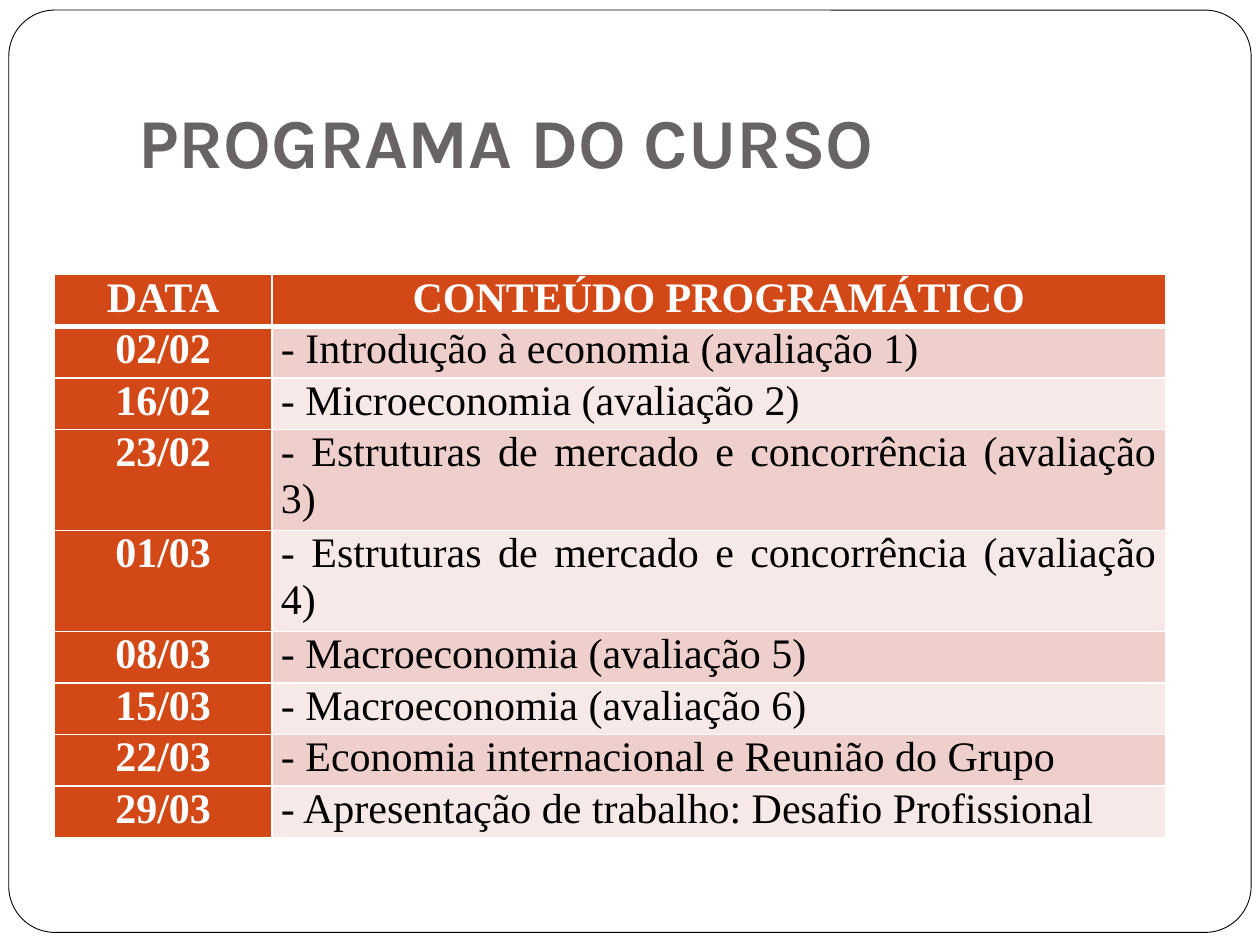
import pptx
import pptx.dml.color
import pptx.enum.shapes
import pptx.enum.text
import pptx.oxml.ns
import pptx.util
from lxml import etree

Inches = pptx.util.Inches
Pt = pptx.util.Pt
ALIGN = pptx.enum.text.PP_ALIGN

COLORS = {
    "white": "FFFFFF",
    "black": "000000",
    "title": "696464",
    "accent": "D34817",
    "band_dark": "EFCFCC",
    "band_light": "F7E9E8",
}

HEADINGS = ("DATA", "CONTEÚDO PROGRAMÁTICO")
CLASSES = [
    ("02/02", "- Introdução à economia (avaliação 1)"),
    ("16/02", "- Microeconomia (avaliação 2)"),
    ("23/02", "- Estruturas de mercado e concorrência (avaliação 3)"),
    ("01/03", "- Estruturas de mercado e concorrência (avaliação 4)"),
    ("08/03", "- Macroeconomia (avaliação 5)"),
    ("15/03", "- Macroeconomia (avaliação 6)"),
    ("22/03", "- Economia internacional e Reunião do Grupo"),
    ("29/03", "- Apresentação de trabalho: Desafio Profissional"),
]


def rgb(name):
    return pptx.dml.color.RGBColor.from_string(COLORS[name])


class SlideBuilder:
    title_font = "Karla"
    table_font = "Times New Roman"

    def __init__(self, slide):
        self.slide = slide

    def add_run(self, paragraph, text, font, size, color, bold):
        run = paragraph.add_run()
        run.text = text
        run.font.name = font
        run.font.size = Pt(size)
        run.font.bold = bold
        run.font.color.rgb = rgb(color)

    def add_frame(self, left, top, width, height):
        shape = self.slide.shapes.add_shape(
            pptx.enum.shapes.MSO_SHAPE.ROUNDED_RECTANGLE,
            Inches(left), Inches(top), Inches(width), Inches(height))
        shape.adjustments[0] = 0.05
        shape.shadow.inherit = False
        shape.fill.solid()
        shape.fill.fore_color.rgb = rgb("white")
        shape.line.color.rgb = rgb("black")
        shape.line.width = Pt(0.5)

    def add_title(self, text, left, top, width, height):
        shape = self.slide.shapes.add_textbox(
            Inches(left), Inches(top), Inches(width), Inches(height))
        frame = shape.text_frame
        frame.word_wrap = True
        frame.vertical_anchor = pptx.enum.text.MSO_ANCHOR.BOTTOM
        frame.margin_bottom = Inches(0.1)
        self.add_run(frame.paragraphs[0], text, self.title_font, 40, "title", True)

    def set_borders(self, cell, top=1, bottom=1):
        properties = cell._tc.get_or_add_tcPr()
        for side, width in (("L", 1), ("R", 1), ("T", top), ("B", bottom)):
            line = etree.SubElement(
                properties, pptx.oxml.ns.qn("a:ln" + side), w=str(Pt(width)))
            fill = etree.SubElement(line, pptx.oxml.ns.qn("a:solidFill"))
            etree.SubElement(
                fill, pptx.oxml.ns.qn("a:srgbClr"), val=COLORS["white"])

    def fill_cell(self, cell, text, fill, color, bold, align):
        cell.margin_left = cell.margin_right = Inches(0.07)
        cell.margin_top = cell.margin_bottom = 0
        cell.fill.solid()
        cell.fill.fore_color.rgb = rgb(fill)
        paragraph = cell.text_frame.paragraphs[0]
        paragraph.alignment = align
        self.add_run(paragraph, text, self.table_font, 24, color, bold)

    def add_schedule(self, rows, left, top, column_widths, row_height):
        table = self.slide.shapes.add_table(
            len(rows), len(column_widths), Inches(left), Inches(top),
            Inches(sum(column_widths)), Inches(row_height * len(rows))).table
        for column, width in zip(table.columns, column_widths):
            column.width = Inches(width)
        for row_index, texts in enumerate(rows):
            table.rows[row_index].height = Inches(row_height)
            band = "band_dark" if row_index % 2 else "band_light"
            for column_index, text in enumerate(texts):
                cell = table.cell(row_index, column_index)
                # A thick rule separates the header from the classes
                self.set_borders(cell, top=3 if row_index == 1 else 1,
                                 bottom=3 if row_index == 0 else 1)
                if row_index == 0 or column_index == 0:
                    self.fill_cell(cell, text, "accent", "white", True, ALIGN.CENTER)
                else:
                    self.fill_cell(cell, text, band, "black", False, ALIGN.JUSTIFY)


def main():
    presentation = pptx.Presentation()
    presentation.slide_width = Inches(10)
    presentation.slide_height = Inches(7.5)
    builder = SlideBuilder(
        presentation.slides.add_slide(presentation.slide_layouts[6]))

    # Frame and title
    builder.add_frame(0.07, 0.08, 9.86, 7.32)
    builder.add_title("PROGRAMA DO CURSO", 1, 0.3, 8.5, 1.25)

    # Course schedule
    builder.add_schedule([HEADINGS] + CLASSES, 0.43, 2.18, (1.73, 7.09), 0.41)

    presentation.save("out.pptx")


if __name__ == "__main__":
    main()
